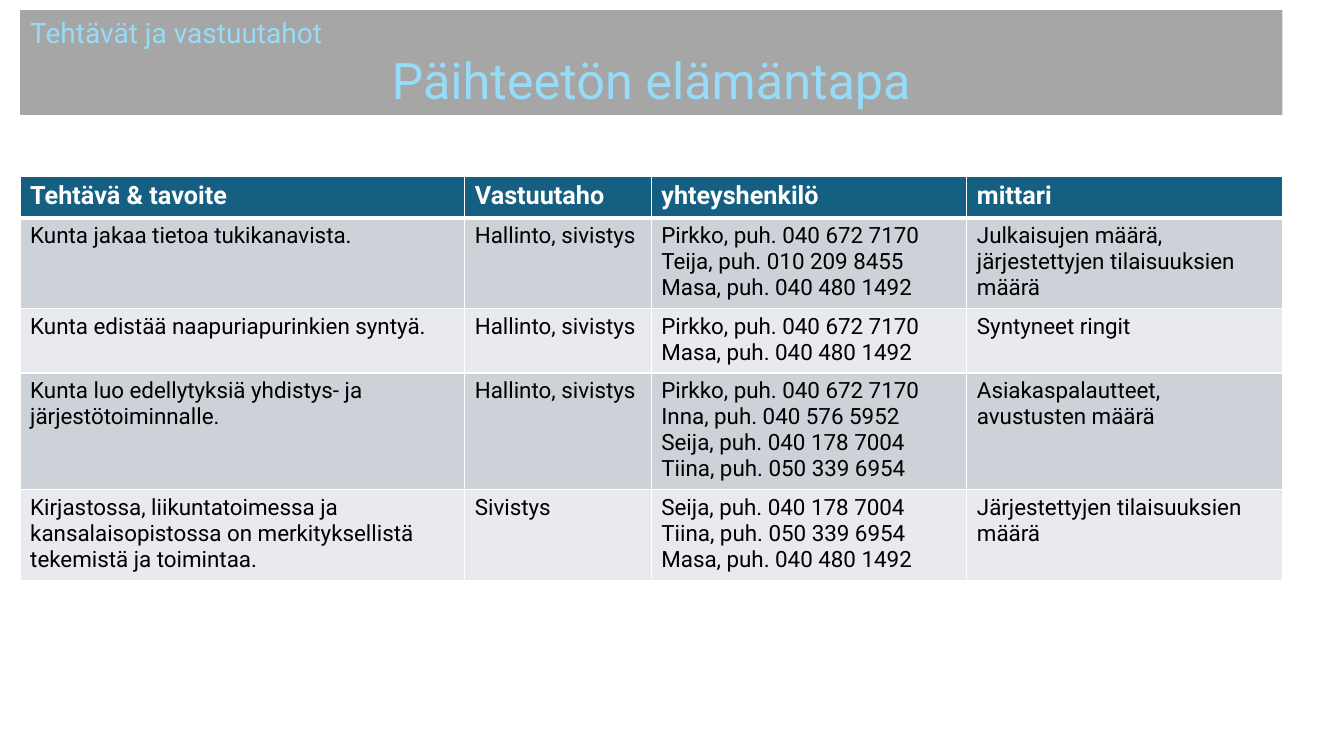
from lxml.etree import SubElement
from pptx import Presentation
from pptx.dml.color import RGBColor
from pptx.enum.text import MSO_ANCHOR, MSO_AUTO_SIZE, PP_ALIGN
from pptx.oxml.ns import qn
from pptx.util import Inches, Pt

FONT = "Roboto"
LEFT, WIDTH = 0.2, 12.52
COLUMN_WIDTHS = [4.41, 1.85, 3.13, 3.13]
ROW_HEIGHTS = [0.41, 0.9, 0.64, 1.16, 0.9]
HEADER_FILL, BAND_FILLS = "156082", ["CCD2D8", "E8EAED"]

PIRKKO = "Pirkko, puh. 040 672 7170"
TEIJA = "Teija, puh. 010 209 8455"
MASA = "Masa, puh. 040 480 1492"
INNA = "Inna, puh. 040 576 5952"
SEIJA = "Seija, puh. 040 178 7004"
TIINA = "Tiina, puh. 050 339 6954"

HEADINGS = ["Tehtävä & tavoite", "Vastuutaho", "yhteyshenkilö", "mittari"]
TASKS = [
    ["Kunta jakaa tietoa tukikanavista.", "Hallinto, sivistys",
     "\n".join([PIRKKO, TEIJA, MASA]),
     "Julkaisujen määrä, järjestettyjen tilaisuuksien määrä"],
    ["Kunta edistää naapuriapurinkien syntyä.", "Hallinto, sivistys",
     "\n".join([PIRKKO, MASA]), "Syntyneet ringit"],
    ["Kunta luo edellytyksiä yhdistys- ja järjestötoiminnalle.", "Hallinto, sivistys",
     "\n".join([PIRKKO, INNA, SEIJA, TIINA]), "Asiakaspalautteet, avustusten määrä"],
    ["Kirjastossa, liikuntatoimessa ja kansalaisopistossa on merkityksellistä "
     "tekemistä ja toimintaa.", "Sivistys",
     "\n".join([SEIJA, TIINA, MASA]), "Järjestettyjen tilaisuuksien määrä"],
]


def paint(fill, color):
    fill.solid()
    fill.fore_color.rgb = RGBColor.from_string(color)


def format_paragraph(paragraph, size, color, bold=False, align=PP_ALIGN.LEFT):
    paragraph.alignment = align
    for run in paragraph.runs:
        run.font.name = FONT
        run.font.size = Pt(size)
        run.font.bold = bold
        run.font.color.rgb = RGBColor.from_string(color)


def set_borders(cell, bottom_width):
    """Draw white borders, which must precede the fill in the cell's XML."""
    properties = cell._tc.get_or_add_tcPr()
    widths = {"a:lnL": 1, "a:lnR": 1, "a:lnT": 1, "a:lnB": bottom_width}
    for position, (side, width) in enumerate(widths.items()):
        line = SubElement(properties, qn(side), w=str(Pt(width)))
        SubElement(SubElement(line, qn("a:solidFill")), qn("a:srgbClr"), val="FFFFFF")
        properties.insert(position, line)


def add_banner(slide):
    banner = slide.shapes.title
    banner.left, banner.top = Inches(LEFT), Inches(0.1)
    banner.width, banner.height = Inches(WIDTH), Inches(1.04)
    paint(banner.fill, "A6A6A6")
    frame = banner.text_frame
    frame.text = "Tehtävät ja vastuutahot\nPäihteetön elämäntapa"
    frame.auto_size = MSO_AUTO_SIZE.NONE
    frame.vertical_anchor = MSO_ANCHOR.TOP
    section, topic = frame.paragraphs
    format_paragraph(section, 20, "96DCF8")
    format_paragraph(topic, 36, "96DCF8", align=PP_ALIGN.CENTER)


def fill_cell(cell, text, fill, size, color, bold, bottom_width):
    cell.text_frame.text = text
    for paragraph in cell.text_frame.paragraphs:
        format_paragraph(paragraph, size, color, bold)
    paint(cell.fill, fill)
    set_borders(cell, bottom_width)


def add_task_table(slide):
    rows = [HEADINGS] + TASKS
    table = slide.shapes.add_table(
        len(rows), len(HEADINGS), Inches(LEFT), Inches(1.75),
        Inches(WIDTH), Inches(sum(ROW_HEIGHTS))).table
    for column, width in zip(table.columns, COLUMN_WIDTHS):
        column.width = Inches(width)
    for index, (row, height, texts) in enumerate(zip(table.rows, ROW_HEIGHTS, rows)):
        row.height = Inches(height)
        for cell, text in zip(row.cells, texts):
            if index == 0:
                fill_cell(cell, text, HEADER_FILL, 18, "FFFFFF", True, 3)
            else:
                fill_cell(cell, text, BAND_FILLS[(index - 1) % 2], 16, "000000", False, 1)


def main():
    presentation = Presentation()
    presentation.slide_width = Inches(13.33)
    presentation.slide_height = Inches(7.5)
    title_only = presentation.slide_layouts[5]
    slide = presentation.slides.add_slide(title_only)
    add_banner(slide)
    add_task_table(slide)
    presentation.save("out.pptx")


if __name__ == "__main__":
    main()
